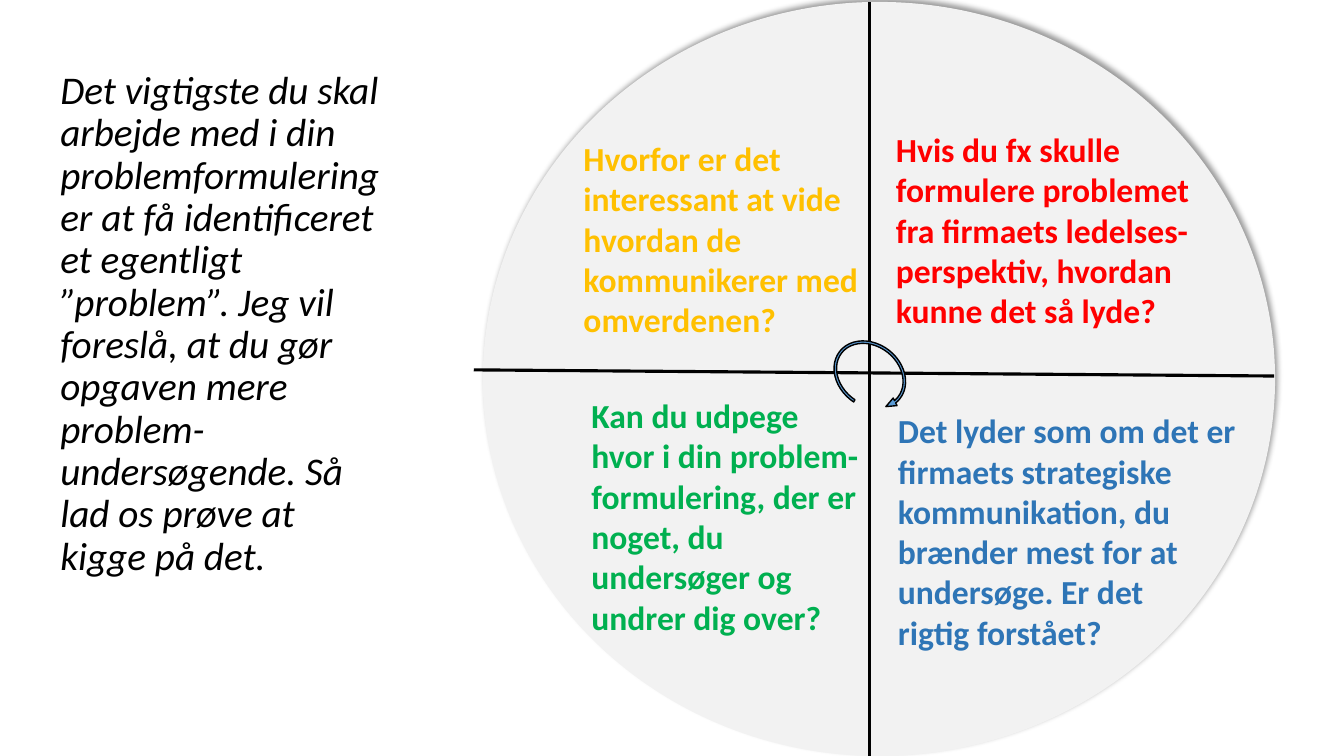
from lxml.etree import SubElement
from pptx import Presentation
from pptx.dml.color import RGBColor
from pptx.enum.shapes import MSO_CONNECTOR, MSO_SHAPE
from pptx.enum.text import MSO_AUTO_SIZE
from pptx.oxml.ns import qn
from pptx.util import Pt

BLACK = RGBColor(0x00, 0x00, 0x00)
PALE_GREY = RGBColor(0xF2, 0xF2, 0xF2)
ARROW_BLUE = RGBColor(0x5B, 0x9B, 0xD5)
YELLOW = RGBColor(0xFF, 0xC0, 0x00)
RED = RGBColor(0xFF, 0x00, 0x00)
GREEN = RGBColor(0x00, 0xB0, 0x50)
BLUE = RGBColor(0x2E, 0x75, 0xB6)

FONT = "Calibri"
ADVICE = (
    "Det vigtigste du skal arbejde med i din problemformulering er at få "
    "identificeret et egentligt ”problem”. Jeg vil foreslå, at du gør opgaven "
    "mere problem-undersøgende. Så lad os prøve at kigge på det."
)
ADVICE_BOX = (36, 46.8, 247, 104.4)

# Paragraphs, colour, (left, top, width, height)
QUESTIONS = [
    (["Kan du udpege hvor i din problem-formulering, der er noget, du "
      "undersøger og undrer dig over?"], GREEN, (415.4, 278.6, 208, 181.4)),
    (["Det lyder som om det er firmaets strategiske kommunikation, du brænder "
      "mest for at undersøge. Er det", "rigtig forstået?"],
     BLUE, (634.3, 289.4, 262.8, 181.4)),
    (["Hvorfor er det interessant at vide hvordan de kommunikerer med "
      "omverdenen?"], YELLOW, (409.7, 95, 219.6, 152.6)),
    (["Hvis du fx skulle formulere problemet fra firmaets ledelses-perspektiv, "
      "hvordan kunne det så lyde?"], RED, (632.9, 88.6, 229.7, 152.6)),
]

CIRCLE_BOX = (344.9, 1.4, 565.9, 538.6)
AXES = [(621.4, 1.4, 621.4, 540), (338.4, 264.2, 910.1, 268.6)]
TURN_BOX = (591.8, 243.4, 59, 49)
TURN_ANGLE = 38.2
TURN_ADJUSTMENTS = (0.037, 9.854, 5.061, 49.664, 0.062)


def points(values):
    return [Pt(value) for value in values]


def add_circle(slide):
    circle = slide.shapes.add_shape(MSO_SHAPE.OVAL, *points(CIRCLE_BOX))
    circle.fill.solid()
    circle.fill.fore_color.rgb = PALE_GREY
    circle.line.fill.background()
    circle.shadow.inherit = False
    effects = circle.element.spPr.find(qn("a:effectLst"))
    shadow = SubElement(effects, qn("a:outerShdw"), blurRad=str(Pt(4)),
                        dist=str(Pt(3)), dir=str(315 * 60000),
                        algn="bl", rotWithShape="0")
    shade = SubElement(shadow, qn("a:srgbClr"), val=str(BLACK))
    SubElement(shade, qn("a:alpha"), val="40000")


def add_axis(slide, ends):
    axis = slide.shapes.add_connector(MSO_CONNECTOR.STRAIGHT, *points(ends))
    axis.line.color.rgb = BLACK
    axis.line.width = Pt(2.25)
    SubElement(axis.element.spPr, qn("a:effectLst"))


def add_text(slide, paragraphs, box, size, colour):
    """Add a wrapping text box and return its text frame."""
    frame = slide.shapes.add_textbox(*points(box)).text_frame
    frame.word_wrap = True
    frame.text = "\n".join(paragraphs)
    for paragraph in frame.paragraphs:
        paragraph.font.name = FONT
        paragraph.font.size = Pt(size)
        paragraph.font.color.rgb = colour
    return frame


def add_turn_arrow(slide):
    turn = slide.shapes.add_shape(MSO_SHAPE.CIRCULAR_ARROW, *points(TURN_BOX))
    for index, value in enumerate(TURN_ADJUSTMENTS):
        turn.adjustments[index] = value
    turn.rotation = TURN_ANGLE
    turn.fill.solid()
    turn.fill.fore_color.rgb = ARROW_BLUE
    turn.line.color.rgb = BLACK
    turn.line.width = Pt(1)
    turn.shadow.inherit = False


def main():
    presentation = Presentation()
    presentation.slide_width, presentation.slide_height = Pt(960), Pt(540)
    slide = presentation.slides.add_slide(presentation.slide_layouts[6])

    add_circle(slide)
    for ends in AXES:
        add_axis(slide, ends)
    for paragraphs, colour, box in QUESTIONS:
        question = add_text(slide, paragraphs, box, 24, colour)
        question.auto_size = MSO_AUTO_SIZE.SHAPE_TO_FIT_TEXT
        for paragraph in question.paragraphs:
            paragraph.font.bold = True
    add_turn_arrow(slide)
    advice = add_text(slide, [ADVICE], ADVICE_BOX, 28, BLACK).paragraphs[0]
    advice.font.italic = True
    advice.line_spacing = 0.9

    presentation.save("out.pptx")


if __name__ == "__main__":
    main()
